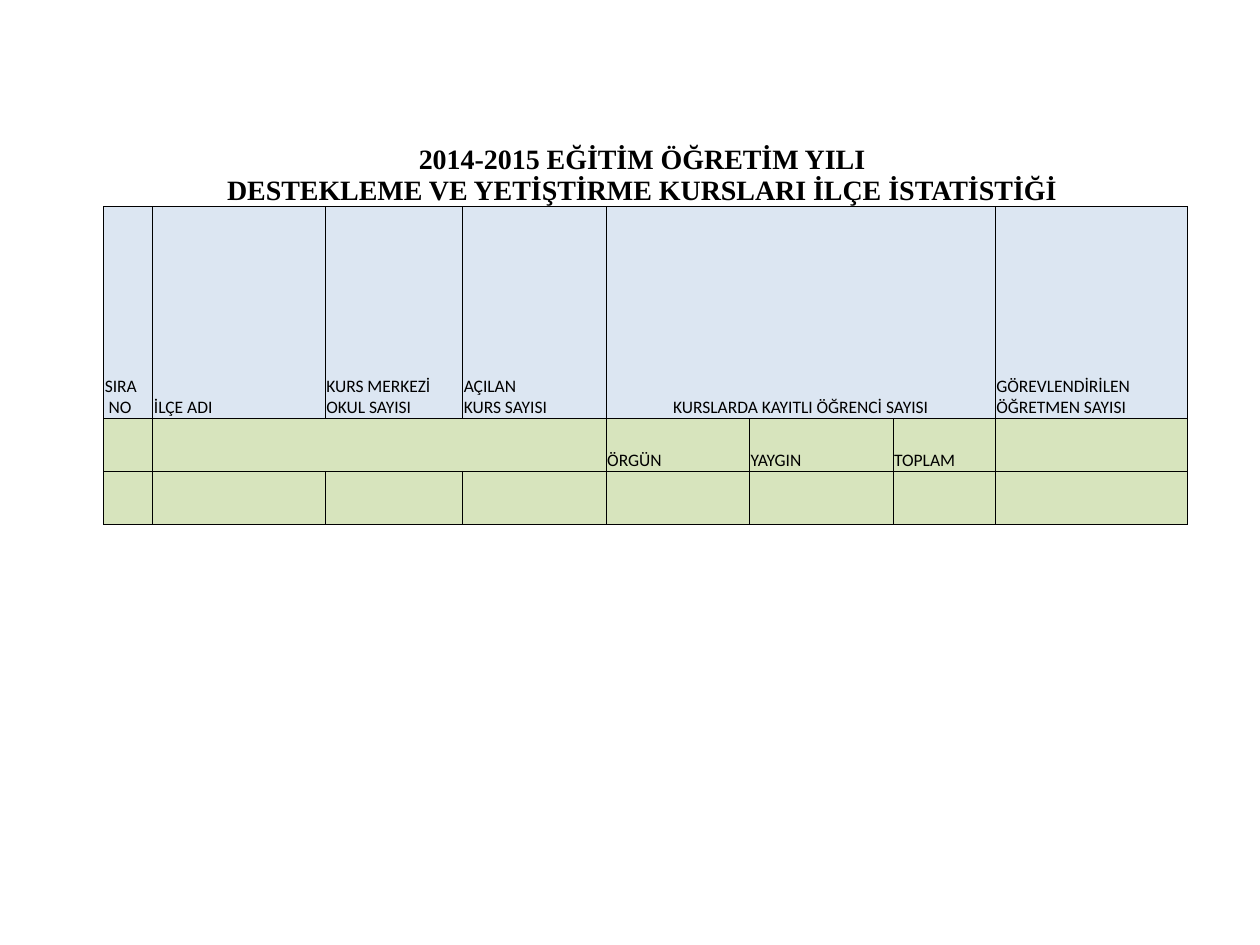
import pptx
import pptx.dml.color
import pptx.enum.text
import pptx.oxml.ns
import pptx.util
from lxml import etree

Pt = pptx.util.Pt
RGBColor = pptx.dml.color.RGBColor
PP_ALIGN = pptx.enum.text.PP_ALIGN
qn = pptx.oxml.ns.qn

BLACK = RGBColor(0x00, 0x00, 0x00)
BLUE = RGBColor(0xDC, 0xE6, 0xF2)
GREEN = RGBColor(0xD7, 0xE4, 0xBD)

COL_WIDTHS = [28.1, 98.5, 78.6, 82, 82, 82, 58.4, 110]
ROW_HEIGHTS = [74, 121.1, 30.3, 30.3]

TITLE = "2014-2015 EĞİTİM ÖĞRETİM YILI \nDESTEKLEME VE YETİŞTİRME KURSLARI İLÇE İSTATİSTİĞİ "
HEADERS = ["SIRA\v NO", "İLÇE ADI", "KURS MERKEZİ \vOKUL SAYISI",
           "AÇILAN \vKURS SAYISI", "KURSLARDA KAYITLI ÖĞRENCİ SAYISI",
           "", "", "GÖREVLENDİRİLEN \vÖĞRETMEN SAYISI"]
SUBHEADERS = ["", "", "", "", "ÖRGÜN", "YAYGIN", "TOPLAM", ""]


class SlideBuilder:
    font, size, color = "Calibri", 10, BLACK
    border_width = 0.5

    def __init__(self, slide):
        self.slide = slide

    def table(self, left, top, widths, heights):
        frame = self.slide.shapes.add_table(
            len(heights), len(widths), Pt(left), Pt(top),
            Pt(sum(widths)), Pt(sum(heights)))
        table = frame.table
        table.first_row = table.horz_banding = False
        for column, width in zip(table.columns, widths):
            column.width = Pt(width)
        for row, height in zip(table.rows, heights):
            row.height = Pt(height)
        return table

    def borders(self, cell, visible):
        tcPr = cell._tc.get_or_add_tcPr()
        for side in "LRTB":
            ln = etree.SubElement(tcPr, qn(f"a:ln{side}"),
                                  w=str(int(Pt(self.border_width))))
            if side in visible:
                fill = etree.SubElement(ln, qn("a:solidFill"))
                etree.SubElement(fill, qn("a:srgbClr"), val=str(self.color))
            else:
                etree.SubElement(ln, qn("a:noFill"))

    def cell(self, cell, text="", fill=None, visible="LRTB",
             align=PP_ALIGN.LEFT, font=None, size=None, bold=False):
        self.borders(cell, visible)
        if fill is None:
            cell.fill.background()
        else:
            cell.fill.solid()
            cell.fill.fore_color.rgb = fill
        cell.vertical_anchor = pptx.enum.text.MSO_ANCHOR.BOTTOM
        cell.margin_left = cell.margin_right = cell.margin_top = Pt(0.7)
        cell.margin_bottom = 0
        if not text:
            return
        cell.text_frame.text = text
        for p in cell.text_frame.paragraphs:
            p.alignment = align
            for r in p.runs:
                r.font.name = font or self.font
                r.font.size = Pt(size or self.size)
                r.font.bold = bold
                r.font.color.rgb = self.color


def main():
    prs = pptx.Presentation()
    prs.slide_width, prs.slide_height = Pt(720), Pt(540)
    s = SlideBuilder(prs.slides.add_slide(prs.slide_layouts[6]))
    table = s.table(59.2, 44, COL_WIDTHS, ROW_HEIGHTS)

    # Title row, open on all sides but the bottom
    for col in range(len(COL_WIDTHS)):
        s.cell(table.cell(0, col), TITLE if col == 0 else "", visible="B",
               align=PP_ALIGN.CENTER, font="Times New Roman", size=16, bold=True)

    # Header, subheader and empty data rows
    body = [(HEADERS, BLUE), (SUBHEADERS, GREEN), ([""] * len(COL_WIDTHS), GREEN)]
    for row, (texts, fill) in enumerate(body, start=1):
        for col, text in enumerate(texts):
            centred = (row, col) == (1, 4)
            s.cell(table.cell(row, col), text, fill,
                   align=PP_ALIGN.CENTER if centred else PP_ALIGN.LEFT)

    # Merged spans: row, first column, last column
    for row, first, last in [(0, 0, 7), (1, 4, 6), (2, 1, 3)]:
        table.cell(row, first).merge(table.cell(row, last))

    prs.save("out.pptx")


if __name__ == "__main__":
    main()
